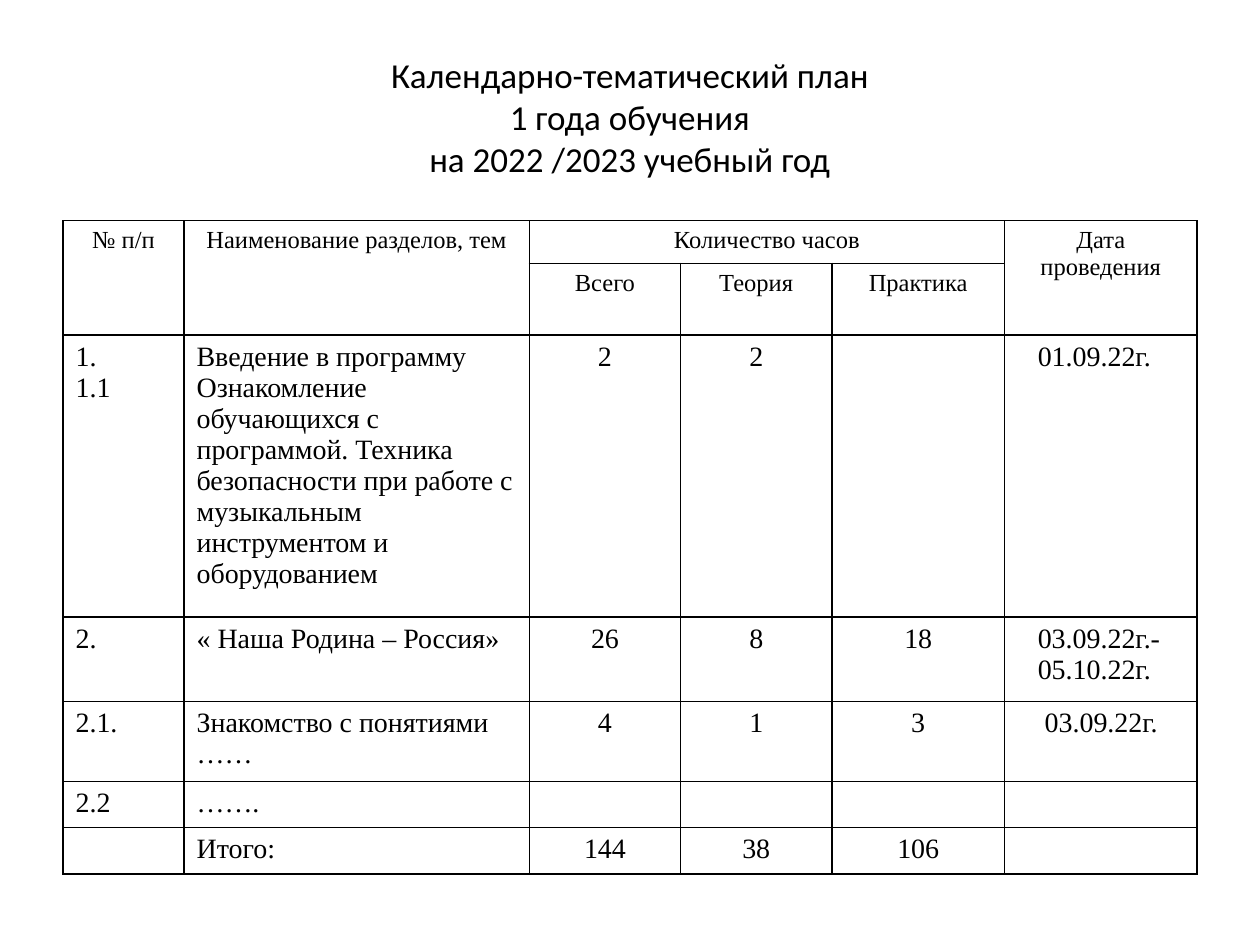
from lxml.etree import SubElement
from pptx import Presentation
from pptx.dml.color import RGBColor
from pptx.enum.text import MSO_ANCHOR as Anchor, PP_ALIGN as Align
from pptx.oxml.ns import qn
from pptx.util import Cm, Pt


def style(paragraph, font_name, size, color):
    for run in paragraph.runs:
        run.font.name = font_name
        run.font.size = Pt(size)
        run.font.color.rgb = RGBColor.from_string(color)


def add_borders(cell, color, width):
    properties = cell._tc.get_or_add_tcPr()
    for side in ("a:lnL", "a:lnR", "a:lnT", "a:lnB"):
        line = SubElement(properties, qn(side), w=str(Pt(width)))
        fill = SubElement(line, qn("a:solidFill"))
        SubElement(fill, qn("a:srgbClr"), val=color)


BLACK = "000000"
COLUMN_WIDTHS = [2.44, 6.96, 3.05, 3.05, 3.48, 3.88]
ROW_HEIGHTS = [0.86, 1.35, 5.69, 1.7, 1.61, 0.89, 0.92]
HEADER_ROWS = 2
DATE_COLUMN = 5
PLAN = [
    ["№ п/п", "Наименование разделов, тем", "Количество часов", "", "", "Дата\nпроведения"],
    ["", "", "Всего", "Теория", "Практика", ""],
    ["1.\n1.1",
     "Введение в программу\nОзнакомление обучающихся с программой. Техника безопасности "
     "при работе с музыкальным инструментом и оборудованием",
     "2", "2", "", "01.09.22г."],
    ["2.", "« Наша Родина – Россия»", "26", "8", "18", "03.09.22г.-\n05.10.22г."],
    ["2.1.", "Знакомство с понятиями ……", "4", "1", "3", "03.09.22г."],
    ["2.2", "…….", "", "", "", ""],
    ["", "Итого:", "144", "38", "106", ""],
]
MERGES = [(0, 0, 1, 0), (0, 1, 1, 1), (0, 2, 0, 4), (0, 5, 1, 5)]
DATE_INDENTS = {2: 0.67, 3: 0.67, 4: 0.81}

presentation = Presentation()
presentation.slide_width = Cm(25.4)
presentation.slide_height = Cm(19.05)
slide = presentation.slides.add_slide(presentation.slide_layouts[6])

heading = slide.shapes.add_textbox(Cm(1.27), Cm(0.76), Cm(22.86), Cm(3.18)).text_frame
heading.word_wrap = True
heading.vertical_anchor = Anchor.MIDDLE
heading.paragraphs[0].text = "Календарно-тематический план\v1 года обучения\vна 2022 /2023 учебный год"
heading.paragraphs[0].alignment = Align.CENTER
style(heading.paragraphs[0], "Calibri", 20, BLACK)

schedule = slide.shapes.add_table(
    len(ROW_HEIGHTS), len(COLUMN_WIDTHS), Cm(1.27), Cm(4.45),
    Cm(sum(COLUMN_WIDTHS)), Cm(sum(ROW_HEIGHTS))).table
schedule.first_row = False
schedule.horz_banding = False
for column, width in zip(schedule.columns, COLUMN_WIDTHS):
    column.width = Cm(width)
for row, height in zip(schedule.rows, ROW_HEIGHTS):
    row.height = Cm(height)

for row_index, entries in enumerate(PLAN):
    is_header = row_index < HEADER_ROWS
    size = 14 if is_header else 16
    for column_index, entry in enumerate(entries):
        cell = schedule.cell(row_index, column_index)
        add_borders(cell, BLACK, 1)
        cell.fill.background()
        cell.text_frame.text = entry
        centered = is_header or 2 <= column_index < DATE_COLUMN
        for paragraph in cell.text_frame.paragraphs:
            paragraph.alignment = Align.CENTER if centered else Align.LEFT
            style(paragraph, "Times New Roman", size, BLACK)
            if not entry:
                paragraph._p.get_or_add_endParaRPr().set("sz", str(size * 100))

for row_index, indent in DATE_INDENTS.items():
    schedule.cell(row_index, DATE_COLUMN).margin_left = Cm(indent)
for top, left, bottom, right in MERGES:
    schedule.cell(top, left).merge(schedule.cell(bottom, right))

presentation.save("out.pptx")
